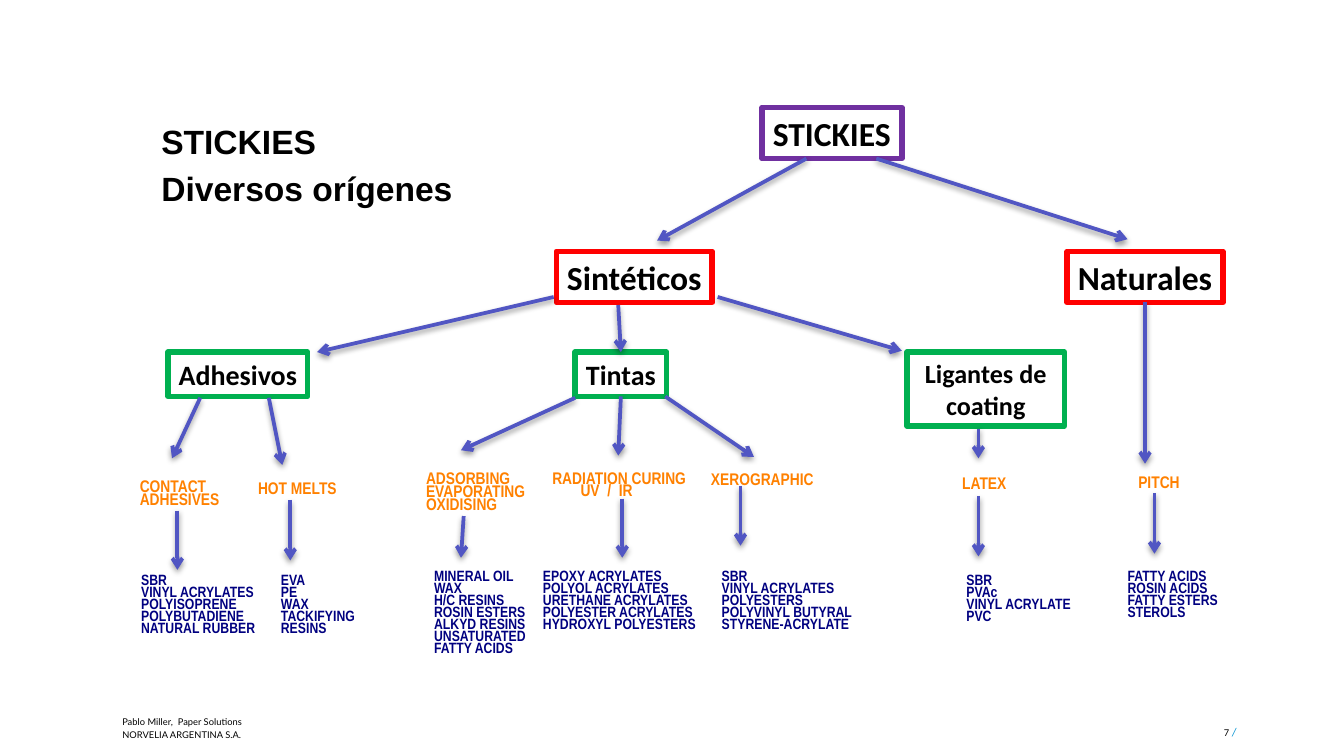
from lxml.etree import SubElement
from pptx import Presentation
from pptx.dml.color import RGBColor
from pptx.enum.shapes import MSO_CONNECTOR, MSO_SHAPE
from pptx.enum.text import MSO_ANCHOR, MSO_AUTO_SIZE, PP_ALIGN
from pptx.oxml.ns import qn
from pptx.util import Inches, Pt

BLACK = RGBColor(0x00, 0x00, 0x00)
NAVY = RGBColor(0x00, 0x00, 0x80)
ORANGE = RGBColor(0xFF, 0x81, 0x00)
INDIGO = RGBColor(0x51, 0x56, 0xC3)
PURPLE = RGBColor(0x70, 0x30, 0xA0)
RED = RGBColor(0xFF, 0x00, 0x00)
GREEN = RGBColor(0x00, 0xB0, 0x50)
BLUE = RGBColor(0x00, 0x92, 0xD2)

NODES = [
    ("STICKIES", 5.67, 0.8, 1.04, 0.38, 18, PURPLE),
    ("Sintéticos", 4.14, 1.87, 1.16, 0.38, 18, RED),
    ("Naturales", 7.94, 1.87, 1.16, 0.38, 18, RED),
    ("Ligantes de coating", 6.75, 2.62, 1.17, 0.55, 14, GREEN),
    ("Tintas", 4.28, 2.62, 0.68, 0.33, 15, GREEN),
    ("Adhesivos", 1.25, 2.62, 1.04, 0.33, 15, GREEN),
]
LABELS = [
    ("CONTACT\nADHESIVES", 1.04, 3.59, 0.65),
    ("HOT MELTS", 1.92, 3.61, 0.65),
    ("ADSORBING\nEVAPORATING\nOXIDISING", 3.17, 3.53, 0.8),
    ("RADIATION CURING", 4.11, 3.53, 1.06),
    ("UV  /  IR", 4.32, 3.62, 0.44),
    ("XEROGRAPHIC", 5.29, 3.54, 0.82),
    ("LATEX", 7.16, 3.57, 0.4),
    ("PITCH", 8.47, 3.56, 0.4),
]
LISTS = [
    ("SBR\nVINYL ACRYLATES\nPOLYISOPRENE\nPOLYBUTADIENE\nNATURAL RUBBER",
     1.05, 4.29, 0.92),
    ("EVA\nPE\nWAX\nTACKIFYING\nRESINS", 2.09, 4.29, 0.62),
    ("MINERAL OIL\nWAX\nH/C RESINS\nROSIN ESTERS\nALKYD RESINS\n"
     "UNSATURATED\nFATTY ACIDS", 3.23, 4.26, 0.75),
    ("EPOXY ACRYLATES\nPOLYOL ACRYLATES\nURETHANE ACRYLATES\n"
     "POLYESTER ACRYLATES\nHYDROXYL POLYESTERS", 4.04, 4.26, 1.22),
    ("SBR\nVINYL ACRYLATES\nPOLYESTERS\nPOLYVINYL BUTYRAL\nSTYRENE-ACRYLATE",
     5.37, 4.26, 1.05),
    ("SBR\nPVAc\nVINYL ACRYLATE\nPVC", 7.19, 4.29, 0.85),
    ("FATTY ACIDS\nROSIN ACIDS\nFATTY ESTERS\nSTEROLS", 8.39, 4.26, 0.75),
]
ARROWS = [
    (6.52, 1.18, 8.39, 1.78), (6, 1.18, 4.89, 1.79),
    (5.34, 2.21, 6.71, 2.61), (4.12, 2.21, 2.36, 2.62),
    (1.49, 2.96, 1.28, 3.41), (2, 2.96, 2.1, 3.46),
    (4.28, 2.96, 3.43, 3.35), (4.95, 2.95, 5.61, 3.4),
    (7.28, 3.19, 7.28, 3.41), (8.59, 3.67, 8.59, 4.12),
    (2.16, 3.72, 2.16, 4.17), (5.51, 3.62, 5.51, 4.06),
    (7.28, 3.69, 7.28, 4.14), (4.63, 3.71, 4.63, 4.15),
    (1.32, 3.8, 1.32, 4.24), (3.45, 3.84, 3.43, 4.15),
]


class Board:
    """Draws the elements of the tree on one slide in a shared style."""

    def __init__(self, deck):
        self.slide = deck.slides.add_slide(deck.slide_layouts[2])
        self.shapes = self.slide.shapes

    def style(self, frame, size, face, color, bold):
        for para in frame.paragraphs:
            for run in para.runs:
                font = run.font
                font.size, font.name, font.bold = Pt(size), face, bold
                font.color.rgb = color

    def inset(self, frame, side, top):
        frame.margin_left = frame.margin_right = Inches(side)
        frame.margin_top = frame.margin_bottom = Inches(top)

    def head(self, text, x, y, w, h):
        title = self.shapes.title.element
        title.getparent().remove(title)
        body = self.slide.placeholders[1]
        body.left, body.top = Inches(x), Inches(y)
        body.width, body.height = Inches(w), Inches(h)
        frame = body.text_frame
        frame.text = text
        frame.auto_size = MSO_AUTO_SIZE.NONE
        frame.vertical_anchor = MSO_ANCHOR.TOP
        self.inset(frame, 0, 0.04)
        for row, para in enumerate(frame.paragraphs):
            para.space_before = Pt(3.6 if row else 0)
        self.style(frame, 18, "Arial", BLACK, True)

    def text(self, text, x, y, w, size, face, color, pitch, bold=True):
        high = Pt(pitch * len(text.split("\n")))
        box = self.shapes.add_textbox(Inches(x), Inches(y), Inches(w), high)
        frame = box.text_frame
        frame.text = text
        frame.word_wrap = True
        self.inset(frame, 0, 0)
        for para in frame.paragraphs:
            para.line_spacing = Pt(pitch)
        self.style(frame, size, face, color, bold)

    def page(self, x, y, w, h):
        box = self.shapes.add_textbox(Inches(x), Inches(y), Inches(w), Inches(h))
        frame = box.text_frame
        frame.word_wrap = True
        self.inset(frame, 0.07, 0.04)
        para = frame.paragraphs[0]
        para.alignment = PP_ALIGN.RIGHT
        para.add_run().text = "7 "
        slash = para.add_run()
        slash.text = "/"
        self.style(frame, 5, "Lato", BLACK, False)
        slash.font.size, slash.font.italic = Pt(6), True
        slash.font.color.rgb = BLUE

    def node(self, text, x, y, w, h, size, color):
        box = self.shapes.add_shape(
            MSO_SHAPE.RECTANGLE, Inches(x), Inches(y), Inches(w), Inches(h))
        box.shadow.inherit = False
        box.fill.background()
        box.line.color.rgb = color
        box.line.width = Pt(3)
        frame = box.text_frame
        frame.text = text
        frame.word_wrap = " " in text
        frame.vertical_anchor = MSO_ANCHOR.MIDDLE
        self.inset(frame, 0.07, 0.04)
        frame.paragraphs[0].alignment = PP_ALIGN.CENTER
        self.style(frame, size, "Calibri", BLACK, True)
        return box

    def arrow(self, x1, y1, x2, y2):
        link = self.shapes.add_connector(
            MSO_CONNECTOR.STRAIGHT, Inches(x1), Inches(y1), Inches(x2), Inches(y2))
        link.line.color.rgb = INDIGO
        link.line.width = Pt(2)
        props = link.element.spPr
        SubElement(props.find(qn("a:ln")), qn("a:tailEnd"), type="arrow")
        effects = SubElement(props, qn("a:effectLst"))
        shade = SubElement(
            effects, qn("a:outerShdw"), blurRad=str(Pt(3.1)), dist=str(Pt(1.6)),
            dir="5400000", rotWithShape="0")
        tint = SubElement(shade, qn("a:srgbClr"), val=str(BLACK))
        SubElement(tint, qn("a:alpha"), val="38000")
        return link


def main():
    deck = Presentation()
    deck.slide_width = Inches(10)
    deck.slide_height = deck.slide_width * 9 // 16
    board = Board(deck)
    board.page(7.16, 5.36, 2.11, 0.18)
    board.text("Pablo Miller,  Paper Solutions\nNORVELIA ARGENTINA S.A.",
               0.91, 5.32, 3.58, 5, "Lato", BLACK, 6.8, bold=False)
    board.head("STICKIES\nDiversos orígenes", 1.2, 0.86, 6.13, 0.67)
    for label in LABELS:
        board.text(*label, 9, "Arial Narrow", ORANGE, 7)
    for items in LISTS:
        board.text(*items, 8, "Arial Narrow", NAVY, 6.4)
    nodes = {node[0]: board.node(*node) for node in NODES}
    for ends in ARROWS:
        board.arrow(*ends)
    inks = nodes["Tintas"]
    board.arrow(4.6, 2.27, 4.62, 2.62).end_connect(inks, 0)
    board.arrow(4.62, 2.95, 4.6, 3.39).begin_connect(inks, 2)
    board.arrow(8.52, 2.25, 8.52, 3.45).begin_connect(nodes["Naturales"], 2)
    deck.save("out.pptx")


if __name__ == "__main__":
    main()
